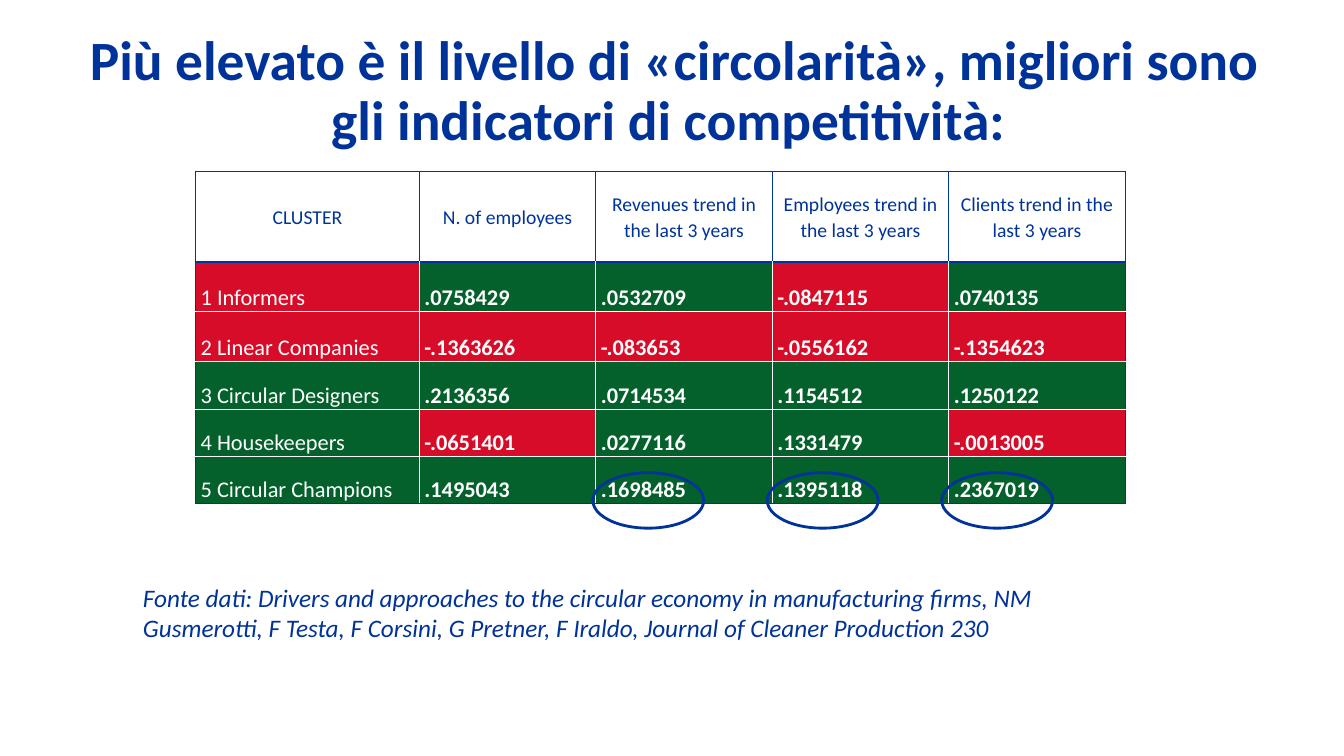
from dataclasses import dataclass

from lxml.etree import SubElement
from pptx import Presentation
from pptx.dml.color import RGBColor as Rgb
from pptx.enum.shapes import MSO_SHAPE as Preset
from pptx.enum.text import MSO_ANCHOR as Anchor, PP_ALIGN as Align
from pptx.oxml.ns import qn
from pptx.util import Inches, Pt

COLOURS = {"blue": "003399", "white": "FFFFFF", "red": "D60C29", "green": "05612C"}
UNIT = Inches(0.1)  # side of one grid square
SLIDE_COLUMNS, SLIDE_ROWS = 133.3, 75
FIRST_COLUMN, VALUE_COLUMN = 22.2, 17.5
ROW_HEIGHTS = [9, 4.9, 5, 4.7, 4.7, 4.7]
CELL_MARGINS = {"margin_left": Inches(0.05), "margin_right": Inches(0.05),
                "margin_top": 0, "margin_bottom": 0}
CELL_SPACING = {"line_spacing": 1.07, "space_after": Pt(8)}


@dataclass(frozen=True)
class Area:
    column: float
    row: float
    columns: float
    rows: float

    def place(self) -> list[int]:
        return [grid(n) for n in (self.column, self.row, self.columns, self.rows)]


@dataclass(frozen=True)
class Cluster:
    name: str
    colour: str
    values: tuple[str, ...]


@dataclass(frozen=True)
class Caption:
    text: str
    area: Area
    frame: dict
    layout: dict
    font: dict


HEADERS = ["CLUSTER", "N. of employees", "Revenues trend in the last 3 years",
           "Employees trend in the last 3 years", "Clients trend in the last 3 years"]
CLUSTERS = [
    Cluster("1 Informers", "red", (".0758429", ".0532709", "-.0847115", ".0740135")),
    Cluster("2 Linear Companies", "red", ("-.1363626", "-.083653", "-.0556162", "-.1354623")),
    Cluster("3 Circular Designers", "green", (".2136356", ".0714534", ".1154512", ".1250122")),
    Cluster("4 Housekeepers", "green", ("-.0651401", ".0277116", ".1331479", "-.0013005")),
    Cluster("5 Circular Champions", "green", (".1495043", ".1698485", ".1395118", ".2367019")),
]
CAPTIONS = [
    Caption("Più elevato è il livello di «circolarità», migliori sono "
            "gli indicatori di competitività: ",
            Area(5, 2.9, 123.8, 12.5), {"vertical_anchor": Anchor.MIDDLE},
            {"alignment": Align.CENTER, "line_spacing": 0.9},
            {"size": Pt(39.6), "bold": True}),
    Caption("Fonte dati: Drivers and approaches to the circular economy in manufacturing "
            "firms, NM Gusmerotti, F Testa, F Corsini, G Pretner, F Iraldo, "
            "Journal of Cleaner Production 230",
            Area(13.2, 57.3, 102.4, 10.1), {}, {}, {"size": Pt(18), "italic": True}),
]
TABLE_AREA = Area(19.4, 17, FIRST_COLUMN + 4 * VALUE_COLUMN, sum(ROW_HEIGHTS))
HIGHLIGHTS = [Area(58.8 + 17.3 * i, 46.9, 11, 5.5) for i in range(3)]


def grid(squares: float) -> int:
    return round(squares * UNIT)


def colour(name: str) -> Rgb:
    return Rgb.from_string(COLOURS[name])


def apply(target, values: dict) -> None:
    for name, value in values.items():
        setattr(target, name, value)


def write(frame, text: str, layout: dict, font: dict, ink: str) -> None:
    para = frame.paragraphs[0]
    apply(para, layout)
    span = para.add_run()
    span.text = text
    apply(span.font, {"name": "Calibri", **font})
    span.font.color.rgb = colour(ink)


def add_caption(page, caption: Caption) -> None:
    box = page.shapes.add_textbox(*caption.area.place())
    apply(box.text_frame, {"word_wrap": True, **caption.frame})
    write(box.text_frame, caption.text, caption.layout, caption.font, "blue")


def fill_cell(cell, text: str, fill: str, layout: dict, font: dict,
              anchor: Anchor, ink: str) -> None:
    apply(cell, {**CELL_MARGINS, "vertical_anchor": anchor})
    write(cell.text_frame, text, {**CELL_SPACING, **layout}, font, ink)
    cell.fill.solid()
    cell.fill.fore_color.rgb = colour(fill)


def add_borders(cell, row: int, column: int) -> None:
    """Blue around the header cells and the table's outline, white inside."""
    header = row == 0
    blue_sides = {"L": header or column == 0,
                  "R": header or column == len(HEADERS) - 1,
                  "T": row <= 1,
                  "B": header or row == len(CLUSTERS)}
    properties = cell._tc.get_or_add_tcPr()
    for position, (side, is_blue) in enumerate(blue_sides.items()):
        line = SubElement(properties, qn(f"a:ln{side}"), w=str(Pt(1)))
        ink = SubElement(SubElement(line, qn("a:solidFill")), qn("a:srgbClr"))
        ink.set("val", COLOURS["blue" if is_blue else "white"])
        properties.insert(position, line)


def add_cluster_table(page) -> None:
    table = page.shapes.add_table(len(ROW_HEIGHTS), len(HEADERS), *TABLE_AREA.place()).table
    apply(table, {"first_row": False, "horz_banding": False})
    for index, column in enumerate(table.columns):
        column.width = grid(VALUE_COLUMN if index else FIRST_COLUMN)
    for row, height in zip(table.rows, ROW_HEIGHTS):
        row.height = grid(height)
    for column, header in enumerate(HEADERS):
        fill_cell(table.cell(0, column), header, "white", {"alignment": Align.CENTER},
                  {"size": Pt(14)}, Anchor.MIDDLE, "blue")
    for row, cluster in enumerate(CLUSTERS, start=1):
        for column, text in enumerate((cluster.name, *cluster.values)):
            value_fill = "red" if text.startswith("-") else "green"
            fill_cell(table.cell(row, column), text, value_fill if column else cluster.colour,
                      {}, {"size": Pt(16), "bold": column > 0}, Anchor.BOTTOM, "white")
    for index, cell in enumerate(table.iter_cells()):
        add_borders(cell, *divmod(index, len(HEADERS)))


def add_highlight(page, area: Area) -> None:
    ellipse = page.shapes.add_shape(Preset.OVAL, *area.place())
    ellipse.shadow.inherit = False
    ellipse.fill.background()
    ellipse.line.color.rgb = colour("blue")
    ellipse.line.width = Pt(2)


def main() -> None:
    deck = Presentation()
    apply(deck, {"slide_width": grid(SLIDE_COLUMNS), "slide_height": grid(SLIDE_ROWS)})
    page = deck.slides.add_slide(deck.slide_layouts[6])
    title, source = CAPTIONS
    add_caption(page, title)
    add_cluster_table(page)
    for area in HIGHLIGHTS:
        add_highlight(page, area)
    add_caption(page, source)
    deck.save("out.pptx")


if __name__ == "__main__":
    main()
